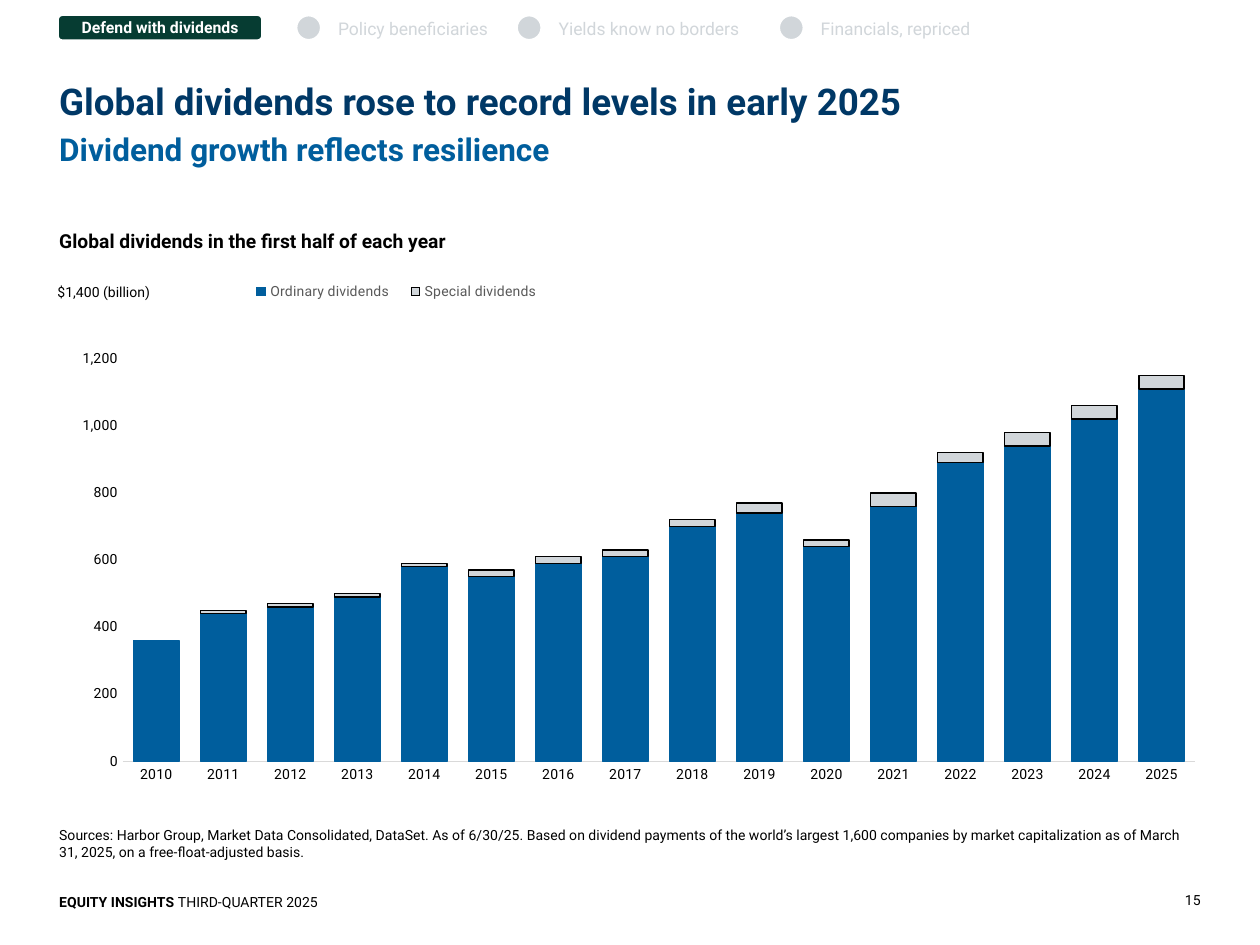
from lxml import etree
from pptx import Presentation
from pptx.chart.data import CategoryChartData
from pptx.dml.color import RGBColor
from pptx.enum.chart import XL_CHART_TYPE, XL_LEGEND_POSITION, XL_TICK_MARK
from pptx.enum.shapes import MSO_SHAPE
from pptx.enum.text import MSO_ANCHOR, MSO_AUTO_SIZE, PP_ALIGN
from pptx.oxml.ns import qn
from pptx.util import Pt

STACKED = XL_CHART_TYPE.COLUMN_STACKED
LEGEND_TOP = XL_LEGEND_POSITION.TOP
NO_TICK = XL_TICK_MARK.NONE
RECTANGLE = MSO_SHAPE.RECTANGLE
ROUNDED = MSO_SHAPE.ROUNDED_RECTANGLE
OVAL = MSO_SHAPE.OVAL
TOP, MIDDLE, BOTTOM = MSO_ANCHOR.TOP, MSO_ANCHOR.MIDDLE, MSO_ANCHOR.BOTTOM
LEFT, CENTER, RIGHT = PP_ALIGN.LEFT, PP_ALIGN.CENTER, PP_ALIGN.RIGHT
NO_AUTOFIT = MSO_AUTO_SIZE.NONE

NAVY, BLUE, GREEN = "003866", "005E9D", "063C32"
GRAY, BLACK, WHITE = "D1D6DA", "000000", "FFFFFF"

YEARS = range(2010, 2026)
DIVIDENDS = [
    ("Ordinary dividends", BLUE, BLUE,
     [360, 440, 460, 490, 580, 550, 590, 610, 700, 740, 640, 760, 890, 940, 1020, 1110]),
    ("Special dividends", GRAY, BLACK,
     [0, 10, 10, 10, 10, 20, 20, 20, 20, 30, 20, 40, 30, 40, 40, 40]),
]
TOPICS = [
    (169.2, "Policy beneficiaries"),
    (295.2, "Yields know no borders"),
    (445, "Financials, repriced"),
]


def color(value):
    return RGBColor.from_string(value)


class SlideBuilder:
    font_name = "Roboto"

    def __init__(self, slide):
        self.slide = slide

    def style_font(self, font, size, hex_color=BLACK, bold=False):
        font.name = self.font_name
        font.size = Pt(size)
        font.bold = bold
        font.color.rgb = color(hex_color)

    def place(self, shape, box):
        shape.left, shape.top, shape.width, shape.height = map(Pt, box)

    def fill_text(self, shape, runs, size, hex_color=BLACK, align=LEFT, anchor=TOP,
                  before=0, after=0, line_spacing=1.0, side_margin=0):
        frame = shape.text_frame
        frame.word_wrap = True
        frame.auto_size = NO_AUTOFIT
        frame.vertical_anchor = anchor
        frame.margin_left = frame.margin_right = Pt(side_margin)
        frame.margin_top = frame.margin_bottom = 0
        paragraph = frame.paragraphs[0]
        paragraph.alignment = align
        paragraph.space_before = Pt(before)
        paragraph.space_after = Pt(after)
        paragraph.line_spacing = line_spacing
        for text, bold in runs:
            run = paragraph.add_run()
            run.text = text
            self.style_font(run.font, size, hex_color, bold)

    def placeholder(self, index, box, text, size, hex_color, **style):
        shape = self.slide.placeholders[index]
        self.place(shape, box)
        self.fill_text(shape, [(text, True)], size, hex_color, **style)
        properties = shape.text_frame.paragraphs[0]._p.get_or_add_pPr()
        properties.set("marL", "0")
        properties.set("indent", "0")
        etree.SubElement(properties, qn("a:buNone"))

    def text(self, box, runs, size, hex_color=BLACK, **style):
        shape = self.slide.shapes.add_textbox(*map(Pt, box))
        self.fill_text(shape, runs, size, hex_color, **style)

    def shape(self, kind, box, fill, line_width=0):
        shape = self.slide.shapes.add_shape(kind, *map(Pt, box))
        shape.shadow.inherit = False
        shape.fill.solid()
        shape.fill.fore_color.rgb = color(fill)
        if line_width:
            shape.line.color.rgb = color(WHITE)
            shape.line.width = Pt(line_width)
        else:
            shape.line.fill.background()
        return shape

    def manual_layout(self, parent, position, fractions, inner=False):
        for old_layout in parent.findall(qn("c:layout")):
            parent.remove(old_layout)
        layout = etree.Element(qn("c:layout"))
        manual = etree.SubElement(layout, qn("c:manualLayout"))
        settings = [("layoutTarget", "inner")] if inner else []
        settings += [("xMode", "edge"), ("yMode", "edge")]
        settings += zip("xywh", map(str, fractions))
        for tag, value in settings:
            etree.SubElement(manual, qn("c:" + tag)).set("val", value)
        parent.insert(position, layout)

    def stacked_chart(self, box, categories, series_rows):
        data = CategoryChartData(number_format="#,##0")
        data.categories = [str(category) for category in categories]
        for name, _, _, values in series_rows:
            data.add_series(name, values)
        chart = self.slide.shapes.add_chart(STACKED, *map(Pt, box), data).chart
        chart.has_title = False
        self.style_font(chart.font, 10)
        plot = chart.plots[0]
        plot.gap_width = 48
        plot.overlap = 100
        plot.vary_by_categories = False
        for series, (_, fill, line, _) in zip(plot.series, series_rows):
            series.format.fill.solid()
            series.format.fill.fore_color.rgb = color(fill)
            series.format.line.color.rgb = color(line)
            series.format.line.width = Pt(0.75)

        for axis in (chart.category_axis, chart.value_axis):
            axis.major_tick_mark = axis.minor_tick_mark = NO_TICK
            axis.has_major_gridlines = False
            self.style_font(axis.tick_labels.font, 8)
        category_line = chart.category_axis.format.line
        category_line.color.rgb = color("D9D9D9")
        category_line.width = Pt(0.75)
        value_axis = chart.value_axis
        value_axis.format.line.fill.background()
        value_axis.minimum_scale = 0
        value_axis.maximum_scale = 1400
        value_axis.major_unit = 200
        value_axis.tick_labels.number_format = "#,##0"
        value_axis.tick_labels.number_format_is_linked = False

        chart.has_legend = True
        legend = chart.legend
        legend.position = LEGEND_TOP
        legend.include_in_layout = False
        self.style_font(legend.font, 8, "595959")
        self.manual_layout(legend._element, 1, (0.16, 0.08, 0.27, 0.04))
        plot_area = chart._chartSpace.chart.plotArea
        self.manual_layout(plot_area, 0, (0.06, 0.1, 0.92, 0.84), inner=True)


def main():
    presentation = Presentation()
    presentation.slide_width = Pt(720)
    presentation.slide_height = Pt(540)
    slide = presentation.slides.add_slide(presentation.slide_layouts[1])
    builder = SlideBuilder(slide)

    builder.placeholder(0, (33.84, 5.76, 673.2, 64.8),
                        "Global dividends rose to record levels in early 2025",
                        21, NAVY, anchor=BOTTOM, line_spacing=0.95)
    builder.placeholder(1, (33.84, 74.16, 652.3, 44.64),
                        "Dividend growth reflects resilience",
                        18, BLUE, before=4.5, after=13.5)

    tab = builder.shape(ROUNDED, (33.12, 8.64, 116.64, 14.4), GREEN, 1)
    tab.adjustments[0] = 0.18
    builder.fill_text(tab, [("Defend with dividends", True)], 9, WHITE,
                      align=CENTER, anchor=MIDDLE, side_margin=7.2)
    for left, topic in TOPICS:
        builder.shape(OVAL, (left, 8.64, 14.4, 14.4), GRAY, 1.5)
        builder.text((left + 24, 10.08, 125, 12.24), [(topic, False)], 10, GRAY)

    builder.text((33.84, 131.04, 315.4, 13.68),
                 [("Global dividends in the first half of each year", True)], 11)
    builder.stacked_chart((30.24, 134.64, 666, 319.68), YEARS, DIVIDENDS)
    axis_label = builder.shape(RECTANGLE, (23.04, 158.4, 72.72, 17.28), WHITE)
    builder.fill_text(axis_label, [("$1,400 (billion)", False)], 8,
                      align=CENTER, anchor=MIDDLE, side_margin=7.2)

    source_note = (
        "Sources: Harbor Group, Market Data Consolidated, DataSet. As of 6/30/25. "
        "Based on dividend payments of the world’s largest 1,600 companies by market "
        "capitalization as of March 31, 2025, on a free-float-adjusted basis."
    )
    builder.text((33.84, 465.12, 652.3, 26.64), [(source_note, False)], 8,
                 anchor=BOTTOM, before=4.5, after=2.2)
    builder.text((33.84, 510.48, 442.8, 9.36),
                 [("EQUITY INSIGHTS ", True), ("THIRD-QUARTER 2025", False)], 8)
    builder.text((644.4, 509.04, 41.76, 10.08), [("15", False)], 8,
                 align=RIGHT, anchor=BOTTOM, before=9, line_spacing=1.1)
    presentation.save("out.pptx")


if __name__ == "__main__":
    main()
